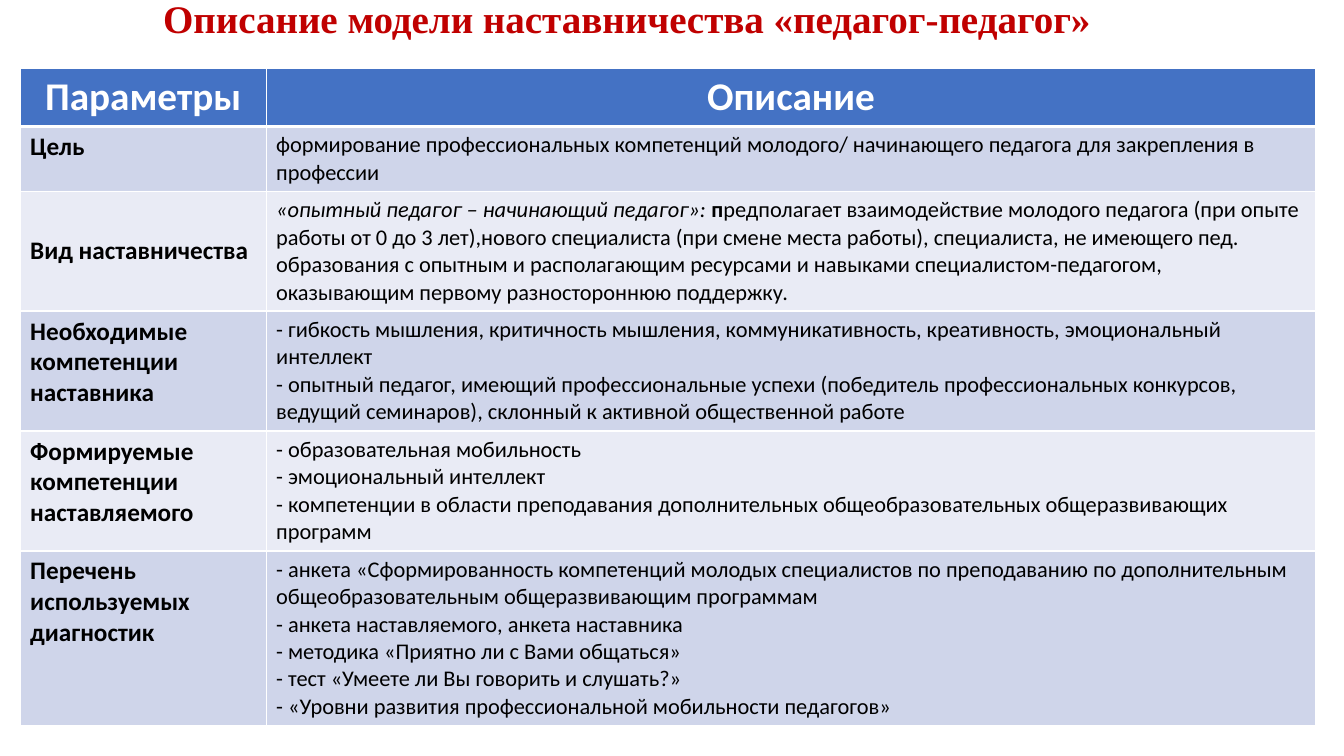
import pptx
import pptx.dml.color
import pptx.enum.text
import pptx.oxml
import pptx.oxml.ns
import pptx.util

COLORS = {
    "title": "C00000",
    "header": "4472C4",
    "odd": "CFD5EA",
    "even": "E9EBF5",
    "white": "FFFFFF",
    "black": "000000",
}
ALIGN = pptx.enum.text.PP_ALIGN
ANCHOR = pptx.enum.text.MSO_ANCHOR


class SlideBuilder:
    """Holds the style and the current slide; lengths are shares of its size."""

    font = "Calibri"
    title_font = "Times New Roman"

    def __init__(self, presentation):
        self.width = presentation.slide_width
        self.height = presentation.slide_height
        self.slide = presentation.slides.add_slide(presentation.slide_layouts[6])

    def box(self, left, top, width, height):
        return (round(left * self.width), round(top * self.height),
                round(width * self.width), round(height * self.height))

    def color(self, name):
        return pptx.dml.color.RGBColor.from_string(COLORS[name])

    def add_run(self, paragraph, text, size, color, font, bold=False, italic=False):
        run = paragraph.add_run()
        run.text = text
        run.font.name = font
        run.font.size = pptx.util.Pt(size)
        run.font.bold = bold
        run.font.italic = italic
        run.font.color.rgb = self.color(color)

    def title(self, text, place):
        shape = self.slide.shapes.add_textbox(*self.box(*place))
        shape.text_frame.word_wrap = True
        paragraph = shape.text_frame.paragraphs[0]
        paragraph.line_spacing = 0.7
        self.add_run(paragraph, text, 27.9, "title", self.title_font, bold=True)

    def borders(self, cell, top, bottom):
        properties = cell._tc.get_or_add_tcPr()
        for side, points in (("L", 1), ("R", 1), ("T", top), ("B", bottom)):
            properties.append(pptx.oxml.parse_xml(
                f'<a:ln{side} {pptx.oxml.ns.nsdecls("a")} w="{pptx.util.Pt(points)}">'
                f'<a:solidFill><a:srgbClr val="{COLORS["white"]}"/></a:solidFill>'
                f'</a:ln{side}>'))

    def cell(self, cell, paragraphs, fill, size, color="black", bold=False,
             align=ALIGN.LEFT, anchor=ANCHOR.TOP, top=1, bottom=1):
        """Each paragraph is a list of (text, style) runs."""
        self.borders(cell, top, bottom)
        cell.fill.solid()
        cell.fill.fore_color.rgb = self.color(fill)
        cell.vertical_anchor = anchor
        for index, runs in enumerate(paragraphs):
            frame = cell.text_frame
            paragraph = frame.add_paragraph() if index else frame.paragraphs[0]
            paragraph.alignment = align
            for text, style in runs:
                self.add_run(paragraph, text, size, color, self.font,
                             **{"bold": bold, **style})

    def table(self, header, rows, place, columns, heights):
        shape = self.slide.shapes.add_table(len(rows) + 1, len(columns), *self.box(*place))
        table = shape.table
        table.horz_banding = False
        for column, share in zip(table.columns, columns):
            column.width = round(share * self.width)
        for row, share in zip(table.rows, heights):
            row.height = round(share * self.height)

        # Header row
        for index, text in enumerate(header):
            self.cell(table.cell(0, index), [[(text, {})]], "header", 28, "white",
                      bold=True, align=ALIGN.CENTER, bottom=3)

        # Banded body rows
        for index, (name, description, anchor) in enumerate(rows, start=1):
            common = {"fill": "odd" if index % 2 else "even", "anchor": anchor,
                      "top": 3 if index == 1 else 1}
            self.cell(table.cell(index, 0), [[(name, {})]], size=18, bold=True, **common)
            self.cell(table.cell(index, 1), description, size=16, **common)


def plain(*lines):
    return [[(line, {})] for line in lines]


ROWS = [
    ("Цель", plain(
        "формирование профессиональных компетенций молодого/ начинающего педагога "
        "для закрепления в профессии"), ANCHOR.TOP),
    ("Вид наставничества", [[
        ("«опытный педагог – начинающий педагог»:", {"italic": True}),
        (" п", {"bold": True}),
        ("редполагает взаимодействие молодого педагога (при опыте работы от 0 до 3 лет),"
         "нового специалиста (при смене места работы), специалиста, не имеющего пед. "
         "образования с опытным и располагающим ресурсами и навыками "
         "специалистом-педагогом, оказывающим первому разностороннюю поддержку.", {}),
    ]], ANCHOR.MIDDLE),
    ("Необходимые компетенции наставника", plain(
        "- гибкость мышления, критичность мышления, коммуникативность, креативность, "
        "эмоциональный интеллект",
        "- опытный педагог, имеющий профессиональные успехи (победитель "
        "профессиональных конкурсов, ведущий семинаров), склонный к активной "
        "общественной работе"), ANCHOR.TOP),
    ("Формируемые компетенции наставляемого", plain(
        "- образовательная мобильность",
        "- эмоциональный интеллект",
        "- компетенции в области преподавания дополнительных общеобразовательных "
        "общеразвивающих программ"), ANCHOR.TOP),
    ("Перечень используемых диагностик", plain(
        "- анкета «Сформированность компетенций молодых специалистов по преподаванию "
        "по дополнительным общеобразовательным общеразвивающим программам",
        "- анкета наставляемого, анкета наставника",
        "- методика «Приятно ли с Вами общаться»",
        "- тест «Умеете ли Вы говорить и слушать?»",
        "- «Уровни развития профессиональной мобильности педагогов»"), ANCHOR.TOP),
]


def main():
    presentation = pptx.Presentation()
    presentation.slide_width = pptx.util.Inches(13.33)
    presentation.slide_height = pptx.util.Inches(7.5)
    builder = SlideBuilder(presentation)

    # Table of the mentoring model
    columns = [2.44 / 13.33, 10.41 / 13.33]
    heights = [height / 7.5 for height in (0.57, 0.64, 1.18, 1.19, 1.19, 1.73)]
    builder.table(["Параметры", "Описание"], ROWS,
                  (0.2 / 13.33, 0.68 / 7.5, sum(columns), sum(heights)), columns, heights)

    # Title
    builder.title("Описание модели наставничества «педагог-педагог»",
                  (1.52 / 13.33, 0.02 / 7.5, 10.2 / 13.33, 0.68 / 7.5))

    presentation.save("out.pptx")


if __name__ == "__main__":
    main()
